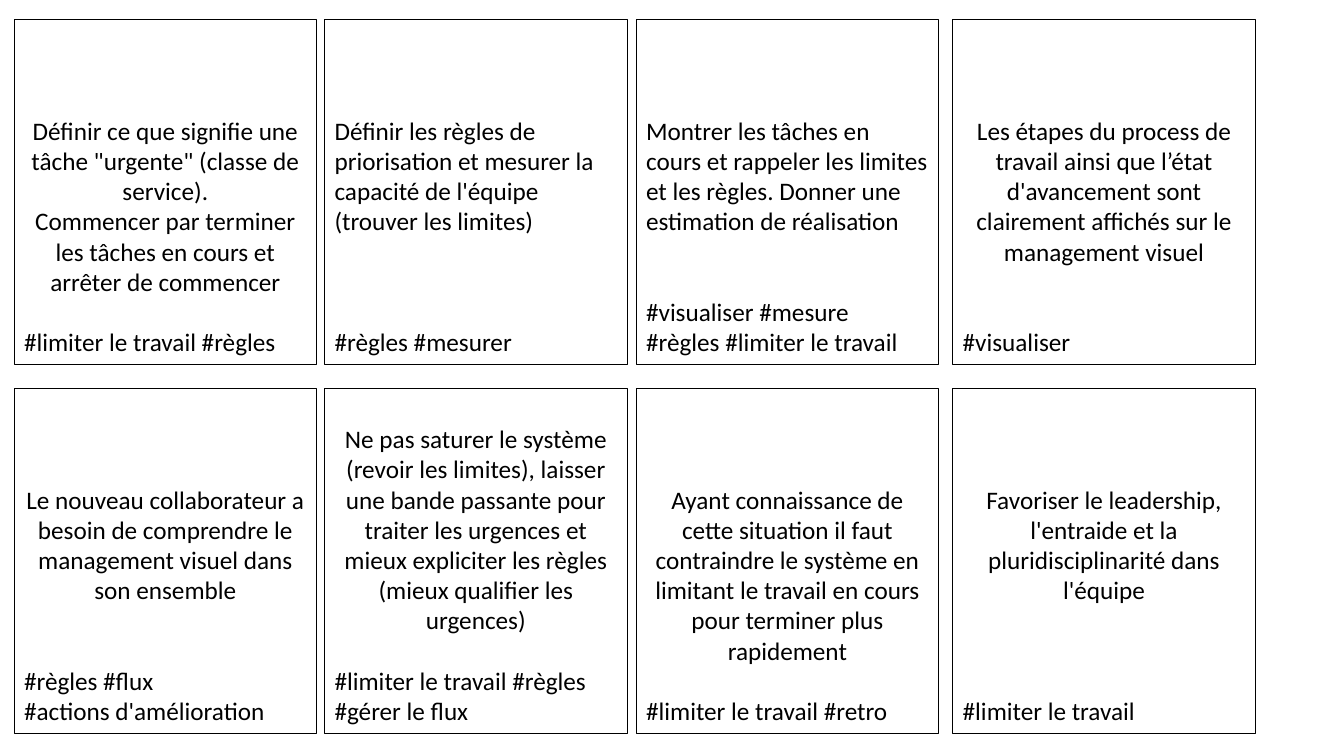
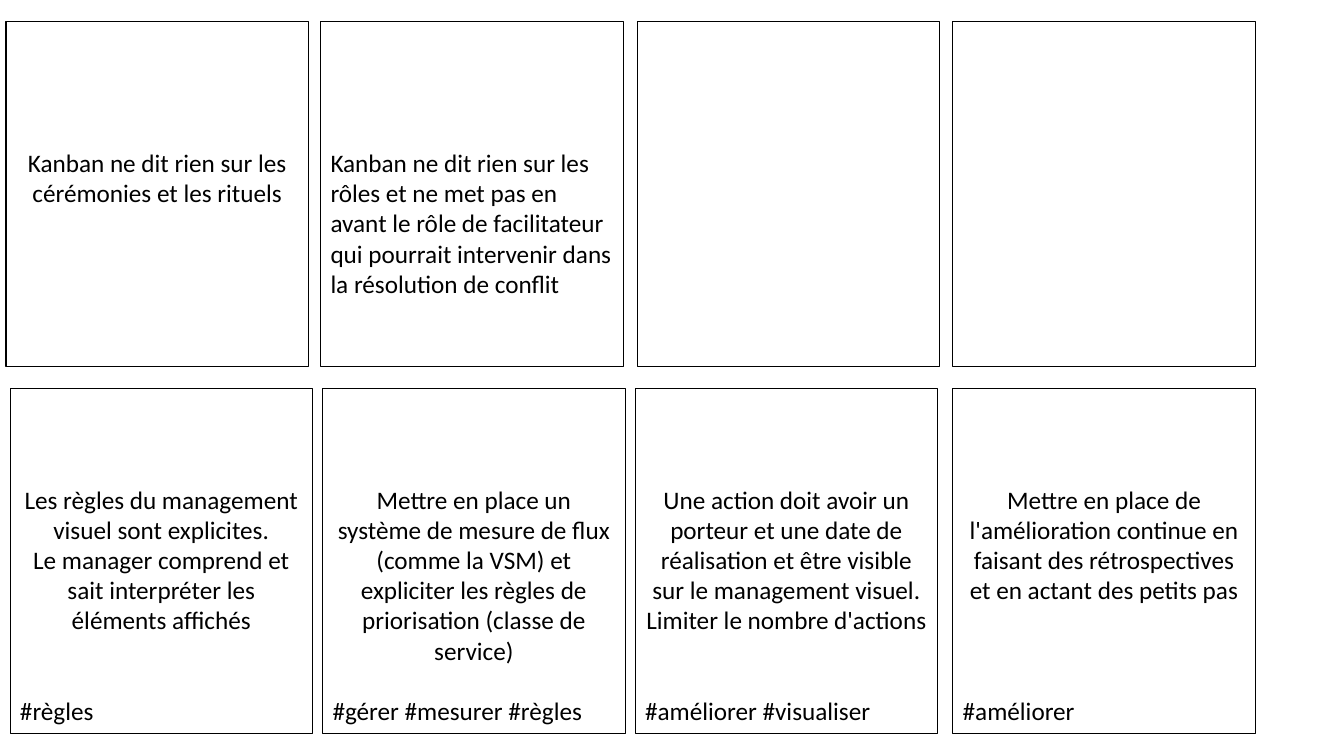
"""Build two sheets of Kanban answer cards, each a grid of four columns and two rows."""
import pptx
import pptx.dml.color
import pptx.enum.shapes
import pptx.enum.text
import pptx.util
from dataclasses import dataclass

Inches, Pt = pptx.util.Inches, pptx.util.Pt
LEFT, CENTER = pptx.enum.text.PP_ALIGN.LEFT, pptx.enum.text.PP_ALIGN.CENTER


@dataclass(frozen=True)
class Theme:
    """Shared look and measures of the cards."""
    font: str = "Calibri"
    size: float = 18
    ink: pptx.dml.color.RGBColor = pptx.dml.color.RGBColor(0, 0, 0)
    border: float = 0.75
    width: float = 3
    height: float = 3.43
    inset: float = 0.05
    row: float = 0.3


THEME = Theme()


@dataclass(frozen=True)
class Card:
    """Answer and tags of a card, with the text rows left free above each."""
    answer: tuple = ()
    tags: tuple = ()
    lead: int = 3
    gap: int = 2
    align: int = CENTER


SHEETS = [
    [
        (0.19, (0.14, 3.22, 6.31, 9.45), [
            Card(('Définir ce que signifie une tâche "urgente" (classe de service).',
                  "Commencer par terminer les tâches en cours et arrêter de commencer"),
                 ("#limiter le travail #règles",), gap=1),
            Card(("Définir les règles de priorisation et mesurer la capacité de l'équipe "
                  "(trouver les limites)",),
                 ("#règles #mesurer",), gap=3, align=LEFT),
            Card(("Montrer les tâches en cours et rappeler les limites et les règles. "
                  "Donner une estimation de réalisation",),
                 ("#visualiser #mesure", "#règles #limiter le travail"), align=LEFT),
            Card(("Les étapes du process de travail ainsi que l’état d'avancement sont "
                  "clairement affichés sur le management visuel",),
                 ("#visualiser",)),
        ]),
        (3.85, (0.14, 3.22, 6.31, 9.45), [
            Card(("Le nouveau collaborateur a besoin de comprendre le management visuel "
                  "dans son ensemble",),
                 ("#règles #flux", "#actions d'amélioration")),
            Card(("Ne pas saturer le système (revoir les limites), laisser une bande "
                  "passante pour traiter les urgences et mieux expliciter les règles "
                  "(mieux qualifier les urgences)",),
                 ("#limiter le travail #règles #gérer le flux",), lead=1, gap=1),
            Card(("Ayant connaissance de cette situation il faut contraindre le système "
                  "en limitant le travail en cours pour terminer plus rapidement",),
                 ("#limiter le travail #retro",), gap=1),
            Card(("Favoriser le leadership, l'entraide et la pluridisciplinarité dans "
                  "l'équipe",),
                 ("#limiter le travail",), gap=3),
        ]),
    ],
    [
        (0.21, (0.06, 3.18, 6.32, 9.45), [
            Card(("Kanban ne dit rien sur les cérémonies et les rituels",), lead=4),
            Card(("Kanban ne dit rien sur les rôles et ne met pas en avant le rôle de "
                  "facilitateur qui pourrait intervenir dans la résolution de conflit",),
                 lead=4, align=LEFT),
            Card(),
            Card(),
        ]),
        (3.85, (0.1, 3.2, 6.3, 9.45), [
            Card(("Les règles du management visuel sont explicites.",
                  "Le manager comprend et sait interpréter les éléments affichés"),
                 ("#règles",)),
            Card(("Mettre en place un système de mesure de flux (comme la VSM) et "
                  "expliciter les règles de priorisation (classe de service)",),
                 ("#gérer #mesurer #règles",), gap=1),
            Card(("Une action doit avoir un porteur et une date de réalisation et être "
                  "visible sur le management visuel. Limiter le nombre d'actions",),
                 ("#améliorer #visualiser",)),
            Card(("Mettre en place de l'amélioration continue en faisant des "
                  "rétrospectives et en actant des petits pas",),
                 ("#améliorer",), gap=3),
        ]),
    ],
]


def write_card(tf, card):
    """Write the answer, then the tags below their gap."""
    tf.word_wrap = True
    tf.vertical_anchor = pptx.enum.text.MSO_ANCHOR.TOP
    tf.margin_top = Inches(THEME.inset + card.lead * THEME.row)
    tf.margin_bottom = Inches(THEME.inset)
    lines = [(text, card.align) for text in card.answer]
    lines += [(text, LEFT) for text in card.tags]
    for i, (text, align) in enumerate(lines):
        p = tf.paragraphs[0] if i == 0 else tf.add_paragraph()
        p.text, p.alignment = text, align
        p.font.name, p.font.size = THEME.font, Pt(THEME.size)
        p.font.color.rgb = THEME.ink
        if i and i == len(card.answer):
            p.space_before = Inches(card.gap * THEME.row)


def add_card(s, left, top, card):
    """Draw one outlined card."""
    sp = s.shapes.add_shape(pptx.enum.shapes.MSO_SHAPE.RECTANGLE, Inches(left), Inches(top),
                            Inches(THEME.width), Inches(THEME.height))
    sp.shadow.inherit = False
    sp.fill.background()
    sp.line.color.rgb = THEME.ink
    sp.line.width = Pt(THEME.border)
    if card.answer:
        write_card(sp.text_frame, card)


def main():
    """Build and save the sheets."""
    prs = pptx.Presentation()
    prs.slide_width, prs.slide_height = Inches(13.33), Inches(7.5)
    for sheet in SHEETS:
        s = prs.slides.add_slide(prs.slide_layouts[6])
        for top, lefts, cards in sheet:
            for left, card in zip(lefts, cards):
                add_card(s, left, top, card)
    prs.save("out.pptx")


if __name__ == "__main__":
    main()
